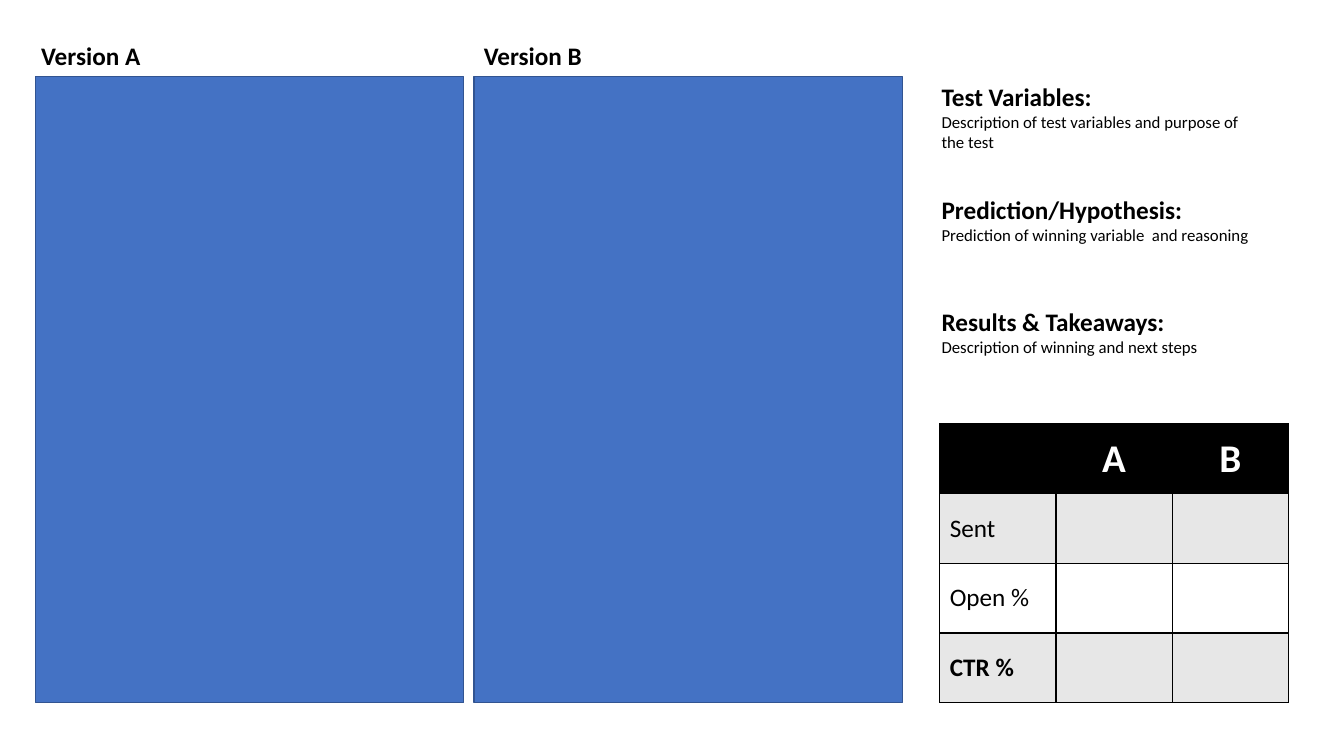
from lxml.etree import SubElement
from pptx import Presentation
from pptx.dml.color import RGBColor
from pptx.enum.shapes import MSO_SHAPE
from pptx.enum.text import MSO_ANCHOR, MSO_AUTO_SIZE, PP_ALIGN
from pptx.oxml.ns import qn
from pptx.util import Inches, Pt

BLACK, WHITE, GREY = "000000", "FFFFFF", "E7E7E7"
BLUE, DARK_BLUE = "4472C4", "325491"


def color(hex_code):
    return RGBColor.from_string(hex_code)


def add_text(slide, left, top, width, height, lines):
    """Add a text box; each line is (text, size, bold)."""
    box = slide.shapes.add_textbox(Inches(left), Inches(top), Inches(width), Inches(height))
    frame = box.text_frame
    frame.word_wrap = True
    frame.auto_size = MSO_AUTO_SIZE.SHAPE_TO_FIT_TEXT
    frame.text = "\n".join(text for text, size, bold in lines)
    for para, (text, size, bold) in zip(frame.paragraphs, lines):
        font = para.runs[0].font
        font.name, font.size, font.bold = "Calibri", Pt(size), bold
        font.color.rgb = color(BLACK)


deck = Presentation()
deck.slide_width, deck.slide_height = Inches(13.33), Inches(7.5)
slide = deck.slides.add_slide(deck.slide_layouts[6])

# Two version panels with their headings
panel_top, panel_width, panel_height = 0.76, 4.25, 6.21
for name, panel_left, label_left in [("Version A", 0.35, 0.31), ("Version B", 4.7, 4.7)]:
    panel = slide.shapes.add_shape(
        MSO_SHAPE.RECTANGLE, Inches(panel_left), Inches(panel_top),
        Inches(panel_width), Inches(panel_height))
    panel.shadow.inherit = False
    panel.fill.solid()
    panel.fill.fore_color.rgb = color(BLUE)
    panel.line.color.rgb = color(DARK_BLUE)
    panel.line.width = Pt(1)
    add_text(slide, label_left, 0.35, 4.21, 0.4, [(name, 18, True)])

# Notes on the test, stacked at an equal pitch
sections = [
    ("Test Variables:", "Description of test variables and purpose of the test", 0.81),
    ("Prediction/Hypothesis:", "Prediction of winning variable  and reasoning", 0.61),
    ("Results & Takeaways:", "Description of winning and next steps", 0.61),
]
section_pitch = 1.115
for index, (heading, description, height) in enumerate(sections):
    add_text(slide, 9.24, panel_top + index * section_pitch, 3.38, height,
             [(heading, 18, True), (description, 12, False)])

# Results table
rows = [["", "A", "B"], ["Sent", "", ""], ["Open %", "", ""], ["CTR %", "", ""]]
row_fills = [BLACK, GREY, WHITE, GREY]
column_width, row_height = 1.153, 0.69
table = slide.shapes.add_table(
    len(rows), 3, Inches(9.32), Inches(4.21),
    Inches(3 * column_width), Inches(len(rows) * row_height)).table
table.horz_banding = False
for column in table.columns:
    column.width = Inches(column_width)

for row_index, (values, fill) in enumerate(zip(rows, row_fills)):
    is_header = row_index == 0
    table.rows[row_index].height = Inches(row_height)
    for column_index, value in enumerate(values):
        cell = table.cell(row_index, column_index)
        cell.vertical_anchor = MSO_ANCHOR.MIDDLE
        cell.text_frame.text = value
        para = cell.text_frame.paragraphs[0]
        para.alignment = PP_ALIGN.CENTER if is_header else PP_ALIGN.LEFT
        for span in para.runs:
            span.font.name = "Calibri"
            span.font.size = Pt(28 if is_header else 18)
            span.font.bold = is_header or value == "CTR %"
            span.font.color.rgb = color(WHITE if is_header else BLACK)

        properties = cell._tc.get_or_add_tcPr()
        for side in ("lnL", "lnR", "lnT", "lnB"):
            width = Pt(2 if is_header and side == "lnT" else 1)
            border = SubElement(properties, qn(f"a:{side}"), w=str(width))
            border_fill = SubElement(border, qn("a:solidFill"))
            SubElement(border_fill, qn("a:srgbClr"), val=BLACK)
        cell.fill.solid()
        cell.fill.fore_color.rgb = color(fill)

deck.save("out.pptx")
